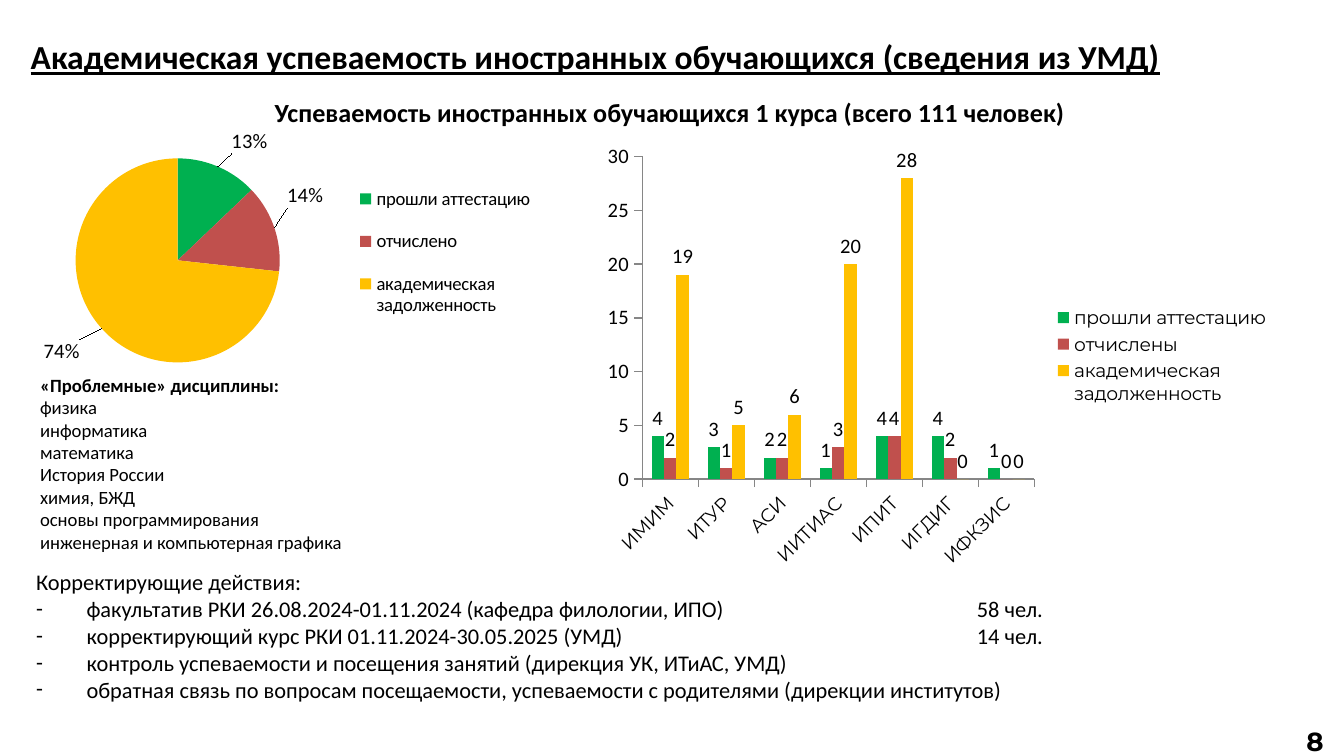
import lxml.etree
import pptx
import pptx.chart.data
import pptx.dml.color
import pptx.enum.chart
import pptx.enum.text
import pptx.oxml
import pptx.oxml.ns
import pptx.util

BLACK = pptx.dml.color.RGBColor(0x00, 0x00, 0x00)
GRAY = pptx.dml.color.RGBColor(0x86, 0x86, 0x86)
GREEN = pptx.dml.color.RGBColor(0x00, 0xB0, 0x50)
RED = pptx.dml.color.RGBColor(0xC0, 0x50, 0x4D)
YELLOW = pptx.dml.color.RGBColor(0xFF, 0xC0, 0x00)
COLORS = (GREEN, RED, YELLOW)

COLUMNS, ROWS = 100, 56.25
BODY, ACCENT = "Calibri", "Montserrat"
qn = pptx.oxml.ns.qn
CHART = pptx.enum.chart.XL_CHART_TYPE
LABEL = pptx.enum.chart.XL_LABEL_POSITION
CENTER = pptx.enum.text.PP_ALIGN.CENTER


class SlideBuilder:
    def __init__(self, prs):
        self.s = prs.slides.add_slide(prs.slide_layouts[6])
        self.column = prs.slide_width / COLUMNS
        self.row = prs.slide_height / ROWS

    def place(self, left, top, width, height):
        return (int(left * self.column), int(top * self.row),
                int(width * self.column), int(height * self.row))

    def style(self, font, size, name=BODY, bold=False):
        font.size = pptx.util.Pt(size)
        font.name = name
        font.bold = bold
        font.color.rgb = BLACK

    def text(self, box, lines, size, name=BODY, bold_lines=0, align=None,
             spacing=None, underline=None, hanging=None):
        tf = self.s.shapes.add_textbox(*self.place(*box)).text_frame
        tf.word_wrap = True
        tf.text = "\n".join(lines)
        for i, p in enumerate(tf.paragraphs):
            if hanging:
                self.hang(p, hanging, bullet=i > 0)
            p.alignment = align
            p.line_spacing = spacing
            for r in p.runs:
                self.style(r.font, size, name, i < bold_lines)
                r.font.underline = underline

    def hang(self, p, columns, bullet):
        indent = int(columns * self.column)
        props = p._p.get_or_add_pPr()
        props.set("marL", str(indent))
        props.set("indent", str(-indent))
        props.set("defTabSz", str(pptx.util.Inches(1)))
        if bullet:
            lxml.etree.SubElement(props, qn("a:buFont")).set("typeface", BODY)
            lxml.etree.SubElement(props, qn("a:buChar")).set("char", "-")

    def layout(self, parent, index, **values):
        for old in parent.findall(qn("c:layout")):
            parent.remove(old)
        layout = pptx.oxml.parse_xml(
            f'<c:layout {pptx.oxml.ns.nsdecls("c")}><c:manualLayout/></c:layout>')
        for tag, value in values.items():
            lxml.etree.SubElement(layout[0], qn(f"c:{tag}")).set("val", str(value))
        parent.insert(index, layout)

    def frame(self, parent, index, area, **extra):
        x, y, w, h = area
        self.layout(parent, index, **extra, xMode="edge", yMode="edge",
                    x=x, y=y, w=w, h=h)

    def chart(self, box, kind, data, plot_area, legend_area, legend_font):
        chart = self.s.shapes.add_chart(kind, *self.place(*box), data).chart
        self.style(chart.font, 18)
        chart.has_title = False
        chart.has_legend = True
        chart.legend.position = pptx.enum.chart.XL_LEGEND_POSITION.RIGHT
        chart.legend.include_in_layout = False
        self.style(chart.legend.font, 10, legend_font)
        self.frame(chart._chartSpace.chart.plotArea, 0, plot_area, layoutTarget="inner")
        self.frame(chart.legend._element, 1, legend_area)
        return chart

    def labels(self, series, number_format):
        labels = series.data_labels
        labels.show_value = True
        labels.position = LABEL.OUTSIDE_END
        labels.number_format = number_format
        labels.number_format_is_linked = False
        self.style(labels.font, 11)

    def pie(self, box, categories, values, label_shifts, plot_area, legend_area):
        data = pptx.chart.data.CategoryChartData(number_format='0"%"')
        data.categories = categories
        data.add_series("Series 1", values)
        chart = self.chart(box, CHART.PIE, data, plot_area, legend_area, BODY)
        series = chart.plots[0].series[0]
        self.labels(series, '0"%"')
        for i, (color, (x, y)) in enumerate(zip(COLORS, label_shifts)):
            point = series.points[i]
            point.format.fill.solid()
            point.format.fill.fore_color.rgb = color
            self.style(point.data_label.font, 11)
            point.data_label.position = LABEL.OUTSIDE_END
            element = series.data_labels._element.findall(qn("c:dLbl"))[i]
            self.layout(element, 1, x=x, y=y)
            number = pptx.oxml.parse_xml(f'<c:numFmt {pptx.oxml.ns.nsdecls("c")}/>')
            number.set("formatCode", '0"%"')
            number.set("sourceLinked", "0")
            element.insert(2, number)

    def columns(self, box, categories, rows, plot_area, legend_area):
        data = pptx.chart.data.CategoryChartData()
        data.categories = categories
        for name, values in rows:
            data.add_series(name, values)
        chart = self.chart(box, CHART.COLUMN_CLUSTERED, data, plot_area,
                           legend_area, ACCENT)
        plot = chart.plots[0]
        plot.gap_width = 150
        plot.overlap = 0
        plot.vary_by_categories = False
        for series, color in zip(plot.series, COLORS):
            series.format.fill.solid()
            series.format.fill.fore_color.rgb = color
            self.labels(series, "General")
        for axis, size, name in ((chart.category_axis, 10, ACCENT),
                                 (chart.value_axis, 11, BODY)):
            axis.has_major_gridlines = False
            axis.major_tick_mark = pptx.enum.chart.XL_TICK_MARK.OUTSIDE
            axis.format.line.color.rgb = GRAY
            self.style(axis.tick_labels.font, size, name)
        chart.value_axis.minimum_scale = 0
        chart.value_axis.maximum_scale = 30
        chart.value_axis.major_unit = 5
        body = chart.category_axis._element.find(qn("c:txPr")).find(qn("a:bodyPr"))
        body.set("rot", "-2700000")


def main():
    prs = pptx.Presentation()
    prs.slide_width = pptx.util.Inches(10)
    prs.slide_height = prs.slide_width * 9 // 16
    slide = SlideBuilder(prs)

    slide.text((1.3, 2.2, 89.8, 4),
               ["Академическая успеваемость иностранных обучающихся (сведения из УМД)"],
               18, bold_lines=1, underline=True)
    slide.text((1.7, 41.8, 96.1, 13.1), [
        "Корректирующие действия:",
        "факультатив РКИ 26.08.2024-01.11.2024 (кафедра филологии, ИПО)\t\t58 чел.",
        "корректирующий курс РКИ 01.11.2024-30.05.2025 (УМД)\t\t\t14 чел.",
        "контроль успеваемости и посещения занятий (дирекция УК, ИТиАС, УМД)",
        "обратная связь по вопросам посещаемости, успеваемости с родителями"
        " (дирекции институтов)",
    ], 12, hanging=3.75)
    slide.text((95.7, 53.5, 4.3, 2.9), ["8"], 14, ACCENT, bold_lines=1, align=CENTER)
    slide.text((2.2, 5.5, 95.3, 4.5),
               ["Успеваемость иностранных обучающихся 1 курса (всего 111 человек)"],
               14, bold_lines=1, align=CENTER, spacing=1.5)
    slide.text((2, 27.3, 42.5, 14.5), [
        "«Проблемные» дисциплины:", "физика", "информатика", "математика",
        "История России", "химия, БЖД", "основы программирования",
        "инженерная и компьютерная графика",
    ], 10, bold_lines=1)

    slide.pie((1.2, 8.2, 39.4, 21.1),
              ["прошли аттестацию", "отчислено", "академическая задолженность"],
              [13, 14, 74], [(0.02, -0.02), (0.01, -0.06), (-0.03, 0.02)],
              (0.11, 0.17, 0.39, 0.72), (0.63, 0.2, 0.36, 0.6))
    slide.columns((44.2, 10, 51.2, 32.9),
                  ["ИМИМ", "ИТУР", "АСИ", "ИИТИАС", "ИПИТ", "ИГДИГ", "ИФКЗИС"],
                  [("прошли аттестацию", [4, 3, 2, 1, 4, 4, 1]),
                   ("отчислены", [2, 1, 2, 3, 4, 2, 0]),
                   ("академическая задолженность", [19, 5, 6, 20, 28, 0, 0])],
                  (0.07, 0.05, 0.57, 0.73), (0.66, 0.38, 0.33, 0.24))
    prs.save("out.pptx")


if __name__ == "__main__":
    main()
